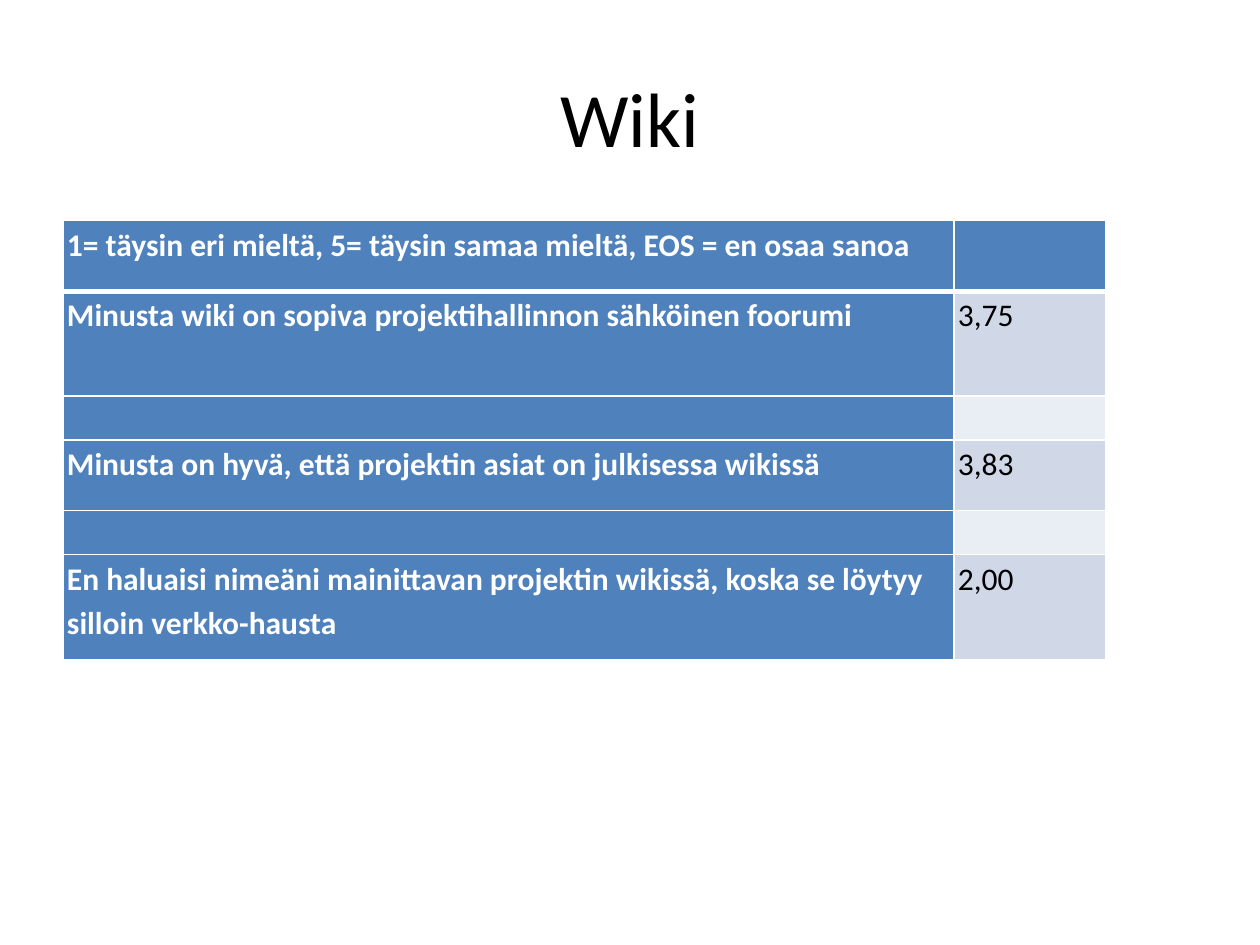
"""Build the Wiki survey slide with its table of average answers."""
from lxml.etree import SubElement
from pptx import Presentation
from pptx.dml.color import RGBColor
from pptx.enum.text import MSO_ANCHOR, PP_ALIGN
from pptx.oxml.ns import qn
from pptx.util import Cm, Pt


def color(value):
    return RGBColor.from_string(value)


def add_border(cell, side, width):
    line = SubElement(cell._tc.get_or_add_tcPr(), qn(f"a:ln{side}"), w=str(Pt(width)))
    fill = SubElement(line, qn("a:solidFill"))
    SubElement(fill, qn("a:srgbClr"), val="FFFFFF")


BLUE, BAND_DARK, BAND_LIGHT = "4F81BD", "D0D8E8", "E9EDF4"
ROWS = [
    ("1= täysin eri mieltä, 5= täysin samaa mieltä, EOS = en osaa sanoa", "", 1.42),
    ("Minusta wiki on sopiva projektihallinnon sähköinen foorumi", "3,75", 2.11),
    ("", "", 0.89),
    ("Minusta on hyvä, että projektin asiat on julkisessa wikissä", "3,83", 1.42),
    ("", "", 0.89),
    ("En haluaisi nimeäni mainittavan projektin wikissä, koska se löytyy "
     "silloin verkko-hausta", "2,00", 2.11),
]
COLUMN_WIDTHS = [17.96, 3.07]

deck = Presentation()
deck.slide_width, deck.slide_height = Cm(25.4), Cm(19.05)
page = deck.slides.add_slide(deck.slide_layouts[5])

title = page.shapes.title
title.left, title.top, title.width, title.height = Cm(1.27), Cm(0.76), Cm(22.86), Cm(3.18)
title.text_frame.vertical_anchor = MSO_ANCHOR.MIDDLE
para = title.text_frame.paragraphs[0]
para.alignment = PP_ALIGN.CENTER
span = para.add_run()
span.text = "Wiki"
span.font.name, span.font.size = "Calibri", Pt(44)
span.font.color.rgb = color("000000")

table_height = sum(height for _, _, height in ROWS)
table = page.shapes.add_table(
    len(ROWS), len(COLUMN_WIDTHS), Cm(1.27), Cm(4.45),
    Cm(sum(COLUMN_WIDTHS)), Cm(table_height)).table
for column, width in zip(table.columns, COLUMN_WIDTHS):
    column.width = Cm(width)

for row_index, (statement, average, height) in enumerate(ROWS):
    table.rows[row_index].height = Cm(height)
    for column_index, text in enumerate((statement, average)):
        cell = table.cell(row_index, column_index)
        is_heading = row_index == 0 or column_index == 0
        cell.margin_left = cell.margin_right = Cm(0.08)
        cell.margin_top = cell.margin_bottom = Cm(0)
        for side in "LRTB":
            under_header = (row_index, side) in [(0, "B"), (1, "T")]
            add_border(cell, side, 3 if under_header else 1)
        cell.fill.solid()
        band = BAND_DARK if row_index % 2 else BAND_LIGHT
        cell.fill.fore_color.rgb = color(BLUE if is_heading else band)
        if text:
            para = cell.text_frame.paragraphs[0]
            para.line_spacing, para.space_after = 1.15, Pt(10)
            span = para.add_run()
            span.text = text
            span.font.name, span.font.size = "Calibri", Pt(18)
            span.font.bold = is_heading
            span.font.color.rgb = color("FFFFFF" if is_heading else "000000")

deck.save("out.pptx")
